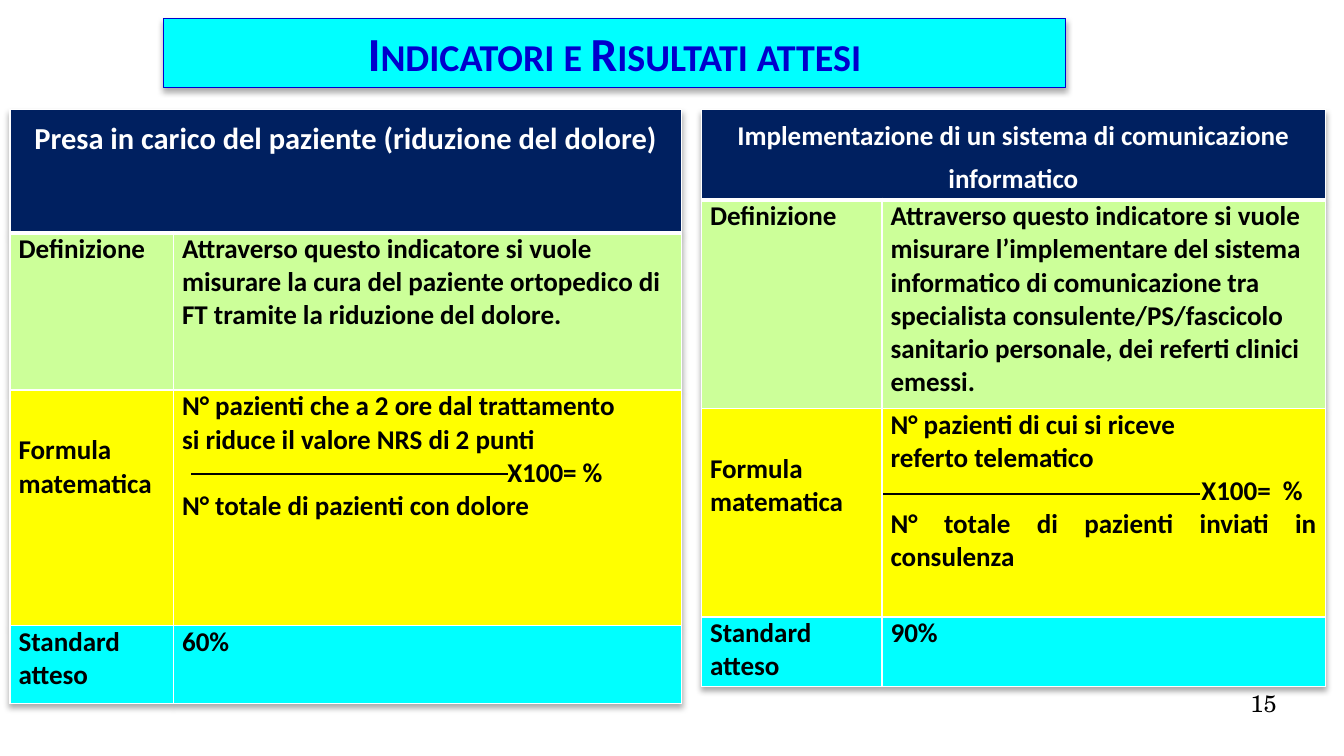
from lxml.etree import SubElement, Element
from pptx import Presentation
from pptx.dml.color import RGBColor
from pptx.enum.shapes import MSO_CONNECTOR, MSO_SHAPE
from pptx.enum.text import MSO_ANCHOR, PP_ALIGN
from pptx.oxml.ns import qn
from pptx.util import Pt

NAVY, GREEN, YELLOW, CYAN = "002060", "CCFF99", "FFFF00", "00FFFF"
BLACK, WHITE, BLUE = "000000", "FFFFFF", "0000CC"
BODY = {"name": "Calibri", "size": Pt(16), "bold": True}
AFTER = {"space_after": Pt(8)}
JUSTIFIED = {"alignment": PP_ALIGN.JUSTIFY}
HEADING = {"alignment": PP_ALIGN.CENTER, "line_spacing": 1.3, **AFTER}
NO_MARGINS = dict.fromkeys(["margin_left", "margin_top", "margin_right", "margin_bottom"], 0)

CARE = {
    "place": (5.8, 64.8), "columns": (96.5, 300.2), "rows": (72.7, 92.9, 139, 46.1),
    "heading": "Presa in carico del paziente (riduzione del dolore)", "heading_size": 18,
    "definition": "Attraverso questo indicatore si vuole misurare la cura del paziente "
                  "ortopedico di FT tramite la riduzione del dolore.",
    "numerator": ["N° pazienti che a 2 ore dal trattamento", "si riduce il valore NRS di 2 punti"],
    "factor": "X100= %", "factor_indent": 192,
    "denominator": "N° totale di pazienti con dolore",
    "target": "60%", "bar": (113, 280),
}
SYSTEM = {
    "place": (414, 64.8), "columns": (106.6, 262), "rows": (53.3, 123.1, 123.1, 41),
    "heading": "Implementazione di un sistema di comunicazione informatico", "heading_size": 16,
    "definition": "Attraverso questo indicatore si vuole misurare l’implementare del sistema "
                  "informatico di comunicazione tra specialista consulente/PS/fascicolo "
                  "sanitario personale, dei referti clinici emessi.",
    "numerator": ["N° pazienti di cui si riceve", "referto telematico"],
    "factor": "X100=  %", "factor_indent": 183.5,
    "denominator": "N° totale di pazienti inviati in consulenza",
    "target": "90%", "bar": (521.3, 291.6),
}
BAR_LENGTH = 187.2


def color(value):
    """Turn a hex string into a colour."""
    return RGBColor.from_string(value)


def apply_format(target, values):
    """Set every attribute named in a dict of format values."""
    for name, value in values.items():
        setattr(target, name, value)


def write(frame, lines, font, font_color):
    """Fill a text frame with (text, paragraph format, indent) lines."""
    for index, (text, layout, indent) in enumerate(lines):
        paragraph = frame.add_paragraph() if index else frame.paragraphs[0]
        apply_format(paragraph, layout)
        if indent:
            paragraph._p.get_or_add_pPr().set("marL", str(Pt(indent)))
        run = paragraph.add_run()
        run.text = text
        apply_format(run.font, font)
        run.font.color.rgb = color(font_color)


def add_color(parent, value):
    """Add a colour element to an XML parent."""
    return SubElement(parent, qn("a:srgbClr"), val=value)


def shadow_effect():
    """Make an effect list that holds a soft downward shadow."""
    effects = Element(qn("a:effectLst"))
    shadow = SubElement(effects, qn("a:outerShdw"), blurRad=str(Pt(3.5)),
                        dist=str(Pt(2.2)), dir="5400000", rotWithShape="0")
    SubElement(add_color(shadow, BLACK), qn("a:alpha"), val="32000")
    return effects


def style_cell(cell, fill, top, bottom):
    """Give a cell white borders, narrow margins and a fill."""
    properties = cell._tc.get_or_add_tcPr()
    for side, width in (("L", 1), ("R", 1), ("T", top), ("B", bottom)):
        border = SubElement(properties, qn("a:ln" + side), w=str(Pt(width)))
        add_color(SubElement(border, qn("a:solidFill")), WHITE)
    cell.fill.solid()
    cell.fill.fore_color.rgb = color(fill)
    apply_format(cell, {**NO_MARGINS, "margin_left": Pt(5.2), "margin_right": Pt(5.2)})


def add_indicator(slide, data):
    """Add the table of one indicator and its fraction bar."""
    widths, heights = data["columns"], data["rows"]
    frame = slide.shapes.add_table(
        len(heights), len(widths), *map(Pt, data["place"]), Pt(sum(widths)), Pt(sum(heights)))
    table = frame.table
    table._tbl.tblPr.insert(0, shadow_effect())
    for column, width in zip(table.columns, widths):
        column.width = Pt(width)
    for row, (height, fill) in enumerate(zip(heights, (NAVY, GREEN, YELLOW, CYAN))):
        table.rows[row].height = Pt(height)
        for cell in table.rows[row].cells:
            style_cell(cell, fill, 3 if row == 1 else 1, 3 if row == 0 else 1)

    table.cell(0, 0).merge(table.cell(0, 1))
    write(table.cell(0, 0).text_frame, [(data["heading"], HEADING, 0)],
          {**BODY, "size": Pt(data["heading_size"])}, WHITE)
    formula = [(text, JUSTIFIED, 0) for text in data["numerator"]]
    formula += [(data["factor"], {}, data["factor_indent"]), (data["denominator"], JUSTIFIED, 0)]
    content = [
        ("Definizione", [(data["definition"], AFTER, 0)]),
        ("Formula matematica", formula),
        ("Standard atteso", [(data["target"], AFTER, 0)]),
    ]
    for row, (label, lines) in enumerate(content, 1):
        write(table.cell(row, 0).text_frame, [(label, AFTER, 0)], BODY, BLACK)
        write(table.cell(row, 1).text_frame, lines, BODY, BLACK)
    table.cell(2, 0).margin_top = Pt(26)
    add_bar(slide, *data["bar"])


def add_bar(slide, left, top):
    """Add the horizontal bar of a fraction."""
    bar = slide.shapes.add_connector(
        MSO_CONNECTOR.STRAIGHT, Pt(left), Pt(top), Pt(left + BAR_LENGTH), Pt(top))
    bar.line.color.rgb = color(BLACK)
    bar.line.width = Pt(1.39)
    SubElement(bar._element.spPr, qn("a:effectLst"))


def add_title(slide, text):
    """Add the cyan title banner in small capitals."""
    shape = slide.shapes.add_shape(MSO_SHAPE.RECTANGLE, Pt(96.5), Pt(10.8), Pt(532.8), Pt(41))
    shape.fill.solid()
    shape.fill.fore_color.rgb = color(CYAN)
    shape.line.color.rgb = color(BLUE)
    shape.line.width = Pt(0.75)
    shape._element.spPr.append(shadow_effect())
    write(shape.text_frame, [(text, {"alignment": PP_ALIGN.CENTER}, 0)],
          {**BODY, "size": Pt(28)}, BLUE)
    shape.text_frame.paragraphs[0].runs[0]._r.get_or_add_rPr().set("cap", "small")


def add_page_number(slide, text):
    """Add the page number at the lower right."""
    frame = slide.shapes.add_textbox(Pt(568.8), Pt(406.8), Pt(185), Pt(31)).text_frame
    apply_format(frame, {**NO_MARGINS, "word_wrap": True, "vertical_anchor": MSO_ANCHOR.TOP})
    write(frame, [(text, {"alignment": PP_ALIGN.RIGHT}, 0)],
          {"name": "TeX Gyre Schola", "size": Pt(14)}, BLACK)


def main():
    """Build the slide and save it."""
    presentation = Presentation()
    apply_format(presentation, {"slide_width": Pt(793.44), "slide_height": Pt(446.4)})
    slide = presentation.slides.add_slide(presentation.slide_layouts[6])
    add_title(slide, "Indicatori e Risultati attesi")
    for indicator in (CARE, SYSTEM):
        add_indicator(slide, indicator)
    add_page_number(slide, "15")
    presentation.save("out.pptx")


if __name__ == "__main__":
    main()
